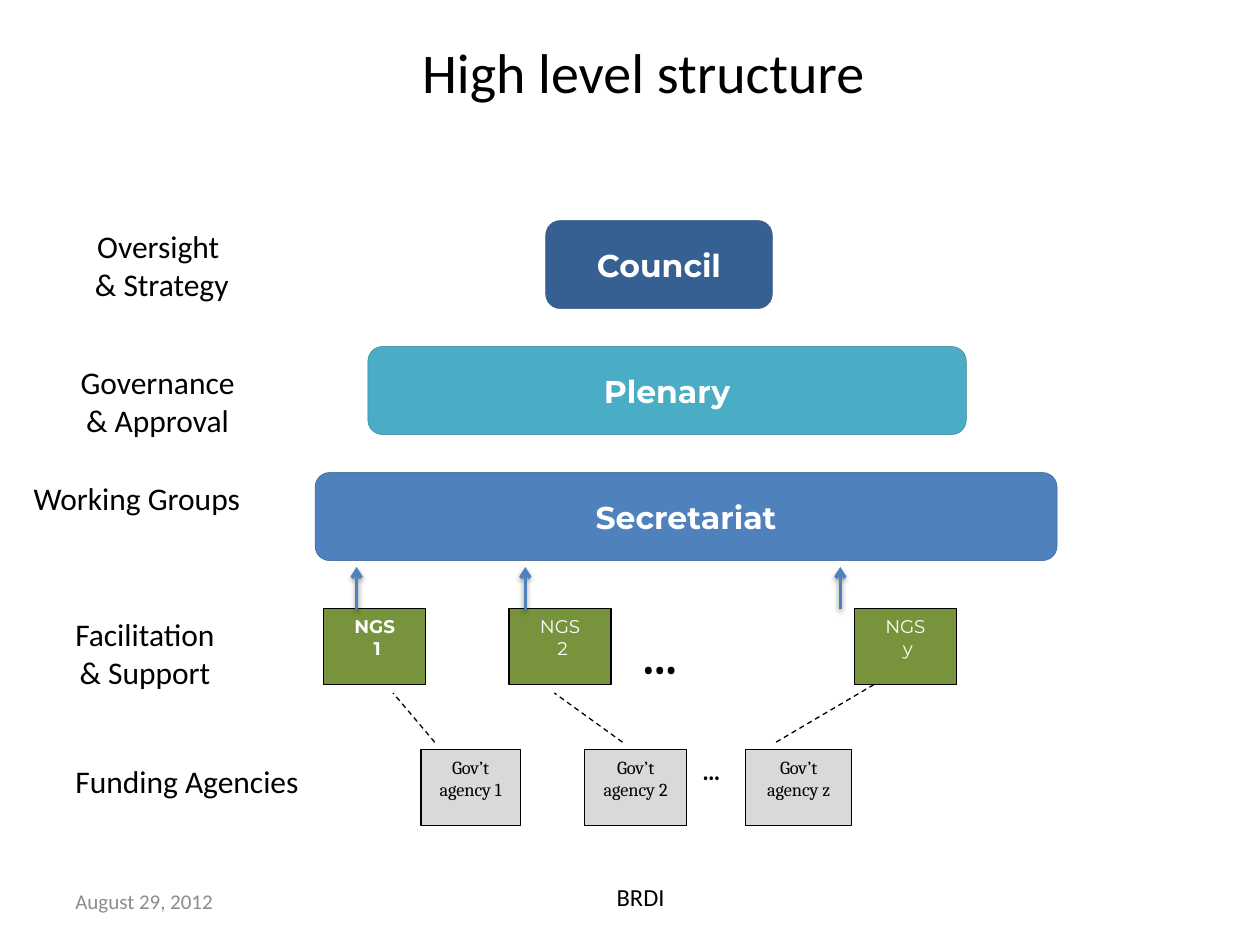
from typing import NamedTuple

from lxml.etree import SubElement
from pptx import Presentation
from pptx.dml.color import RGBColor
from pptx.enum.dml import MSO_LINE
from pptx.enum.shapes import MSO_CONNECTOR, MSO_SHAPE
from pptx.enum.text import MSO_ANCHOR, PP_ALIGN
from pptx.oxml.ns import qn
from pptx.util import Pt

BLACK = RGBColor(0x00, 0x00, 0x00)
WHITE = RGBColor(0xFF, 0xFF, 0xFF)
GREY_TEXT = RGBColor(0x8C, 0x8C, 0x8C)
GREY = RGBColor(0xD9, 0xD9, 0xD9)
GREEN = RGBColor(0x77, 0x93, 0x3C)
NAVY = RGBColor(0x37, 0x60, 0x92)
TEAL = RGBColor(0x4B, 0xAC, 0xC6)
BLUE = RGBColor(0x4F, 0x81, 0xBD)
NAVY_EDGE = RGBColor(0x3A, 0x5F, 0x8C)
TEAL_EDGE = RGBColor(0x37, 0x7F, 0x92)

TIER_H, BOX_H = 50.4, 43.2
NGS_TOP, AGENCY_TOP = 347.8, 428.4
NGS_W = 58.3
ARROW_TIP = 324


class Area(NamedTuple):
    left: float
    top: float
    width: float
    height: float


class Tier(NamedTuple):
    name: str
    left: float
    top: float
    width: float
    fill: RGBColor
    edge: RGBColor


class Box(NamedTuple):
    text: str
    left: float
    width: float
    bold: bool = False


class Link(NamedTuple):
    x1: float
    y1: float
    x2: float
    y2: float


class Label(NamedTuple):
    text: str
    area: Area
    align: PP_ALIGN = PP_ALIGN.CENTER


TIERS = [
    Tier("Council", 311.8, 126, 129.6, NAVY, NAVY_EDGE),
    Tier("Plenary", 210.2, 198, 342, TEAL, TEAL_EDGE),
    Tier("Secretariat", 180, 270, 424.1, BLUE, NAVY_EDGE),
]
NGS_BOXES = [
    Box("NGS\n 1", 185, NGS_W, True),
    Box("NGS\n 2", 290.9, NGS_W),
    Box("NGS\n y", 488.2, NGS_W),
]
AGENCIES = [
    Box("Gov’t agency 1", 240.5, 56.9),
    Box("Gov’t agency 2", 334.1, 58.3),
    Box("Gov’t agency z", 426.2, 60.5),
]
AGENCY_LINKS = [
    Link(248.4, 424.1, 224.6, 396),
    Link(355.7, 424.1, 316.8, 396),
    Link(443.5, 424.1, 501.1, 390.2),
]
ARROW_XS = [203.8, 300.2, 480.2]
ROLES = [
    Label("Oversight \n& Strategy", Area(46.8, 126, 91.4, 51.1)),
    Label("Governance\n& Approval", Area(38.2, 203.8, 103.7, 51.1)),
    Label("Working Groups", Area(12.2, 270, 133.9, 28.8), PP_ALIGN.LEFT),
    Label("Facilitation\n& Support", Area(34.6, NGS_TOP, 96.5, 51.1)),
    Label("Funding Agencies", Area(36, 432, 144, 28.8), PP_ALIGN.LEFT),
]


def write(s, text: str, *, size: float, font: str = "Calibri",
          color: RGBColor = BLACK, bold: bool = False,
          align: PP_ALIGN = PP_ALIGN.CENTER,
          anchor: MSO_ANCHOR = MSO_ANCHOR.TOP, wrap: bool = True) -> None:
    tf = s.text_frame
    tf.word_wrap = wrap
    tf.vertical_anchor = anchor
    tf.text = text
    for p in tf.paragraphs:
        p.alignment = align
        for r in p.runs:
            r.font.name, r.font.size = font, Pt(size)
            r.font.bold = bold
            r.font.color.rgb = color


def add_text(slide, area: Area, text: str, **fmt) -> None:
    write(slide.shapes.add_textbox(*map(Pt, area)), text, **fmt)


def add_block(slide, kind: MSO_SHAPE, area: Area, text: str, fill: RGBColor,
              edge: RGBColor, edge_width: float, **fmt) -> None:
    s = slide.shapes.add_shape(kind, *map(Pt, area))
    s.shadow.inherit = False
    s.fill.solid()
    s.fill.fore_color.rgb = fill
    s.line.color.rgb = edge
    s.line.width = Pt(edge_width)
    write(s, text, **fmt)


def add_line(slide, link: Link, color: RGBColor, width: float):
    """Return the connector and its empty effect list."""
    c = slide.shapes.add_connector(MSO_CONNECTOR.STRAIGHT, *map(Pt, link))
    c.line.color.rgb = color
    c.line.width = Pt(width)
    return c, SubElement(c._element.spPr, qn("a:effectLst"))


def add_dashed_link(slide, link: Link) -> None:
    c, _ = add_line(slide, link, BLACK, 0.75)
    c.line.dash_style = MSO_LINE.DASH


def add_arrow(slide, x: float) -> None:
    """Draw a softly shadowed arrow from an NGS box up to the Secretariat."""
    c, effects = add_line(slide, Link(x, NGS_TOP, x, ARROW_TIP), BLUE, 2)
    SubElement(c.line._get_or_add_ln(), qn("a:tailEnd"), type="arrow")
    shadow = SubElement(effects, qn("a:outerShdw"), blurRad=str(Pt(3.1)),
                        dist=str(Pt(1.6)), dir="5400000", rotWithShape="0")
    tint = SubElement(shadow, qn("a:srgbClr"), val=str(BLACK))
    SubElement(tint, qn("a:alpha"), val="38000")


def main() -> None:
    prs = Presentation()
    prs.slide_width, prs.slide_height = Pt(720), Pt(540)
    slide = prs.slides.add_slide(prs.slide_layouts[5])

    title = slide.shapes.title
    title.left, title.top, title.width, title.height = map(
        Pt, Area(234, 18, 270, 46.1))
    write(title, "High level structure", size=32, align=PP_ALIGN.LEFT,
          wrap=False)

    add_text(slide, Area(340.6, 354.2, 72.7, BOX_H), "…", size=28,
             font="Cambria", bold=True)
    for t in TIERS:
        add_block(slide, MSO_SHAPE.ROUNDED_RECTANGLE,
                  Area(t.left, t.top, t.width, TIER_H), t.name, t.fill, t.edge,
                  0.25, size=18, font="Montserrat", color=WHITE, bold=True,
                  anchor=MSO_ANCHOR.MIDDLE)
    for link in AGENCY_LINKS:
        add_dashed_link(slide, link)
    for boxes, top, fill, font, color in (
            (AGENCIES, AGENCY_TOP, GREY, "Cambria", BLACK),
            (NGS_BOXES, NGS_TOP, GREEN, "Montserrat", WHITE)):
        for b in boxes:
            add_block(slide, MSO_SHAPE.RECTANGLE,
                      Area(b.left, top, b.width, BOX_H), b.text, fill, BLACK,
                      0.75, size=10.5, font=font, color=color, bold=b.bold)
    add_text(slide, Area(366.5, AGENCY_TOP, 79.9, BOX_H), "…", size=14,
             font="Cambria", bold=True)
    for x in ARROW_XS:
        add_arrow(slide, x)
    for role in ROLES:
        add_text(slide, role.area, role.text, size=18, align=role.align,
                 wrap=False)

    add_text(slide, Area(36, 500.4, 167.8, 28.8), "August 29, 2012", size=12,
             color=GREY_TEXT, align=PP_ALIGN.LEFT, anchor=MSO_ANCHOR.MIDDLE)
    add_text(slide, Area(234, 498.2, 264.2, 28.8), "BRDI", size=14,
             anchor=MSO_ANCHOR.MIDDLE)
    prs.save("out.pptx")


if __name__ == "__main__":
    main()
